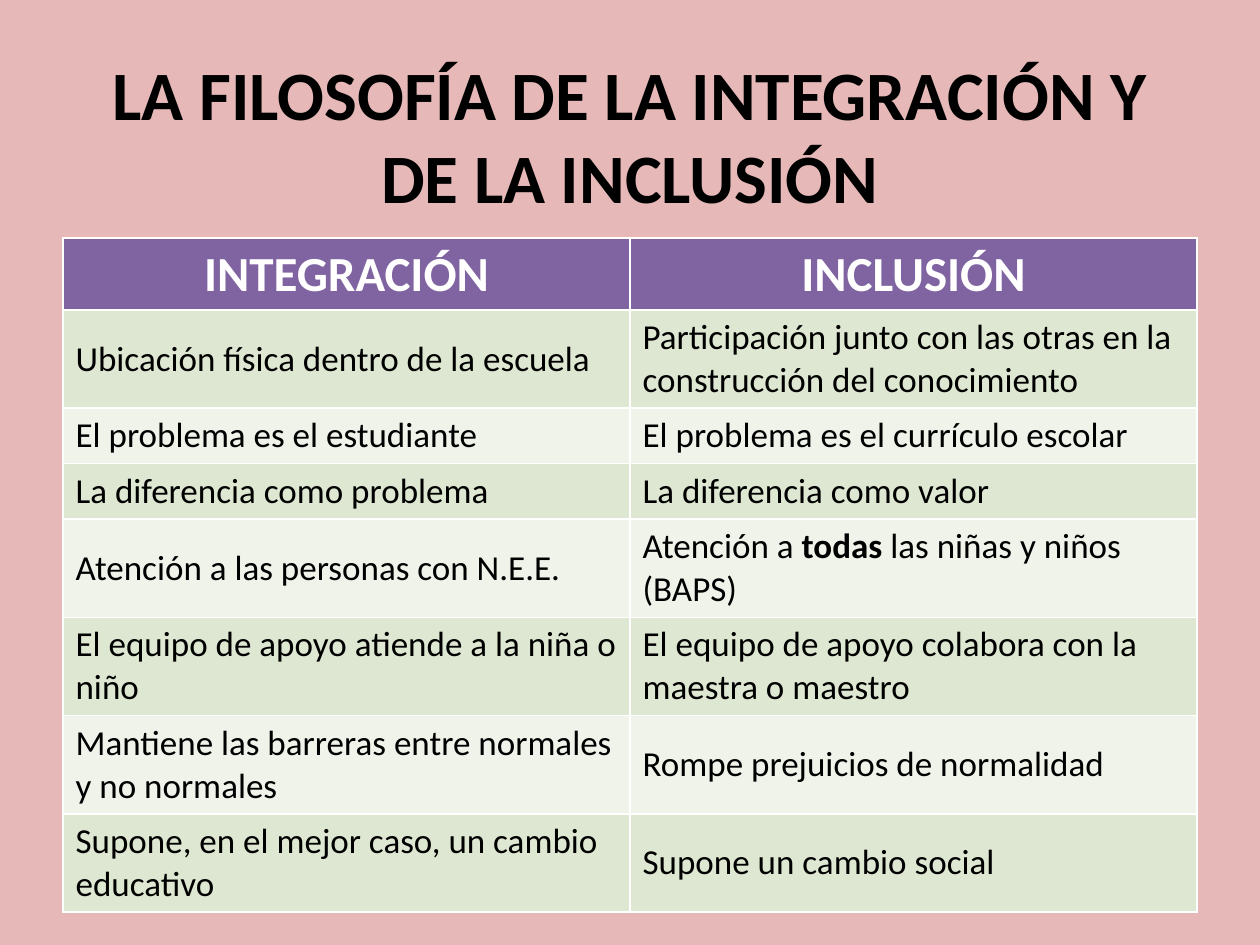
from pptx import Presentation
from pptx.dml.color import RGBColor
from pptx.enum import text
from pptx.util import Inches, Pt

COLORS = {
    "background": "E6B9B8",
    "header": "8064A2",
    "band_dark": "DEE7D1",
    "band_light": "EFF3EA",
    "black": "000000",
    "white": "FFFFFF",
}
FONT = "Calibri"
TITLE = "LA FILOSOFÍA DE LA INTEGRACIÓN Y DE LA INCLUSIÓN"
HEADINGS = ("INTEGRACIÓN", "INCLUSIÓN")
# Double asterisks mark bold words; a line break starts a new paragraph.
CONTRASTS = [
    ("Ubicación física dentro de la escuela",
     "Participación junto con las otras en la\nconstrucción del conocimiento"),
    ("El problema es el estudiante", "El problema es el currículo escolar"),
    ("La diferencia como problema", "La diferencia como valor"),
    ("Atención a las personas con N.E.E.",
     "Atención a **todas **las niñas y niños (BAPS)"),
    ("El equipo de apoyo atiende a la niña o niño",
     "El equipo de apoyo colabora con la maestra o maestro"),
    ("Mantiene las barreras entre normales y no normales",
     "Rompe prejuicios de normalidad"),
    ("Supone, en el mejor caso, un cambio educativo",
     "Supone un cambio social"),
]
HEADER_HEIGHT, ONE_LINE, TWO_LINES = 0.57, 0.44, 0.78
ROW_HEIGHTS = [HEADER_HEIGHT, TWO_LINES, ONE_LINE, ONE_LINE] + [TWO_LINES] * 4


def color(name):
    return RGBColor.from_string(COLORS[name])


def write(frame, wording, size, ink="black", bold=False,
          align=text.PP_ALIGN.LEFT):
    """Fill a text frame, toggling bold at each pair of asterisks."""
    frame.word_wrap = True
    for index, line in enumerate(wording.split("\n")):
        paragraph = frame.add_paragraph() if index else frame.paragraphs[0]
        paragraph.alignment = align
        for part, words in enumerate(line.split("**")):
            run = paragraph.add_run()
            run.text = words
            run.font.name = FONT
            run.font.size = Pt(size)
            run.font.bold = bold or part % 2 == 1
            run.font.color.rgb = color(ink)


def add_title(slide, left, top, width, height):
    title = slide.shapes.add_textbox(
        Inches(left), Inches(top), Inches(width), Inches(height))
    title.text_frame.vertical_anchor = text.MSO_ANCHOR.MIDDLE
    write(title.text_frame, TITLE, 39.6, bold=True,
          align=text.PP_ALIGN.CENTER)


def fill_cell(cell, fill, anchor, wording, **style):
    cell.fill.solid()
    cell.fill.fore_color.rgb = color(fill)
    cell.vertical_anchor = anchor
    write(cell.text_frame, wording, **style)


def add_comparison(slide, left, top, width):
    table = slide.shapes.add_table(
        len(ROW_HEIGHTS), len(HEADINGS), Inches(left), Inches(top),
        Inches(width), Inches(sum(ROW_HEIGHTS))).table
    for row, height in zip(table.rows, ROW_HEIGHTS):
        row.height = Inches(height)
    for column, heading in enumerate(HEADINGS):
        table.columns[column].width = Inches(width / len(HEADINGS))
        fill_cell(table.cell(0, column), "header", text.MSO_ANCHOR.TOP,
                  heading, size=28, ink="white", bold=True,
                  align=text.PP_ALIGN.CENTER)
    for row, contrast in enumerate(CONTRASTS, start=1):
        band = "band_dark" if row % 2 else "band_light"
        for column, statement in enumerate(contrast):
            fill_cell(table.cell(row, column), band, text.MSO_ANCHOR.MIDDLE,
                      statement, size=20)


def main():
    deck = Presentation()
    deck.slide_width, deck.slide_height = Inches(10), Inches(7.5)
    slide = deck.slides.add_slide(deck.slide_layouts[6])
    slide.background.fill.solid()
    slide.background.fill.fore_color.rgb = color("background")
    add_title(slide, 0.5, 0.44, 9, 1.25)
    add_comparison(slide, 0.5, 1.89, 9)
    deck.save("out.pptx")


if __name__ == "__main__":
    main()
